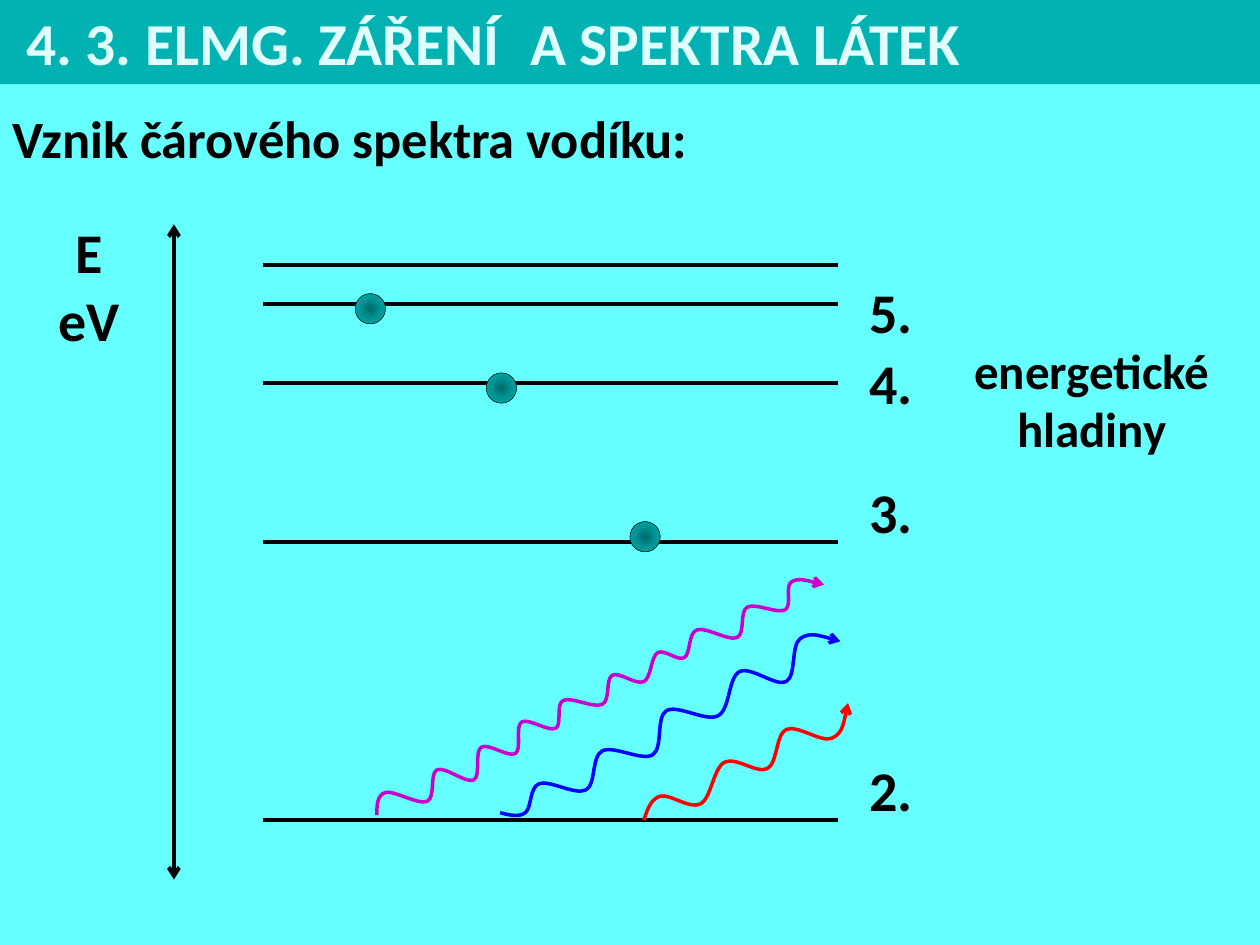
from lxml import etree
from pptx import Presentation
from pptx.dml.color import RGBColor
from pptx.enum.shapes import MSO_CONNECTOR, MSO_SHAPE
from pptx.enum.text import MSO_ANCHOR, PP_ALIGN
from pptx.oxml import parse_xml
from pptx.oxml.ns import nsdecls, qn
from pptx.util import Pt

STRAIGHT = MSO_CONNECTOR.STRAIGHT
RECTANGLE, OVAL = MSO_SHAPE.RECTANGLE, MSO_SHAPE.OVAL
LEFT, CENTER = PP_ALIGN.LEFT, PP_ALIGN.CENTER
MIDDLE = MSO_ANCHOR.MIDDLE

BLACK, TEAL = "000000", "00B2B2"
ELECTRON_STOPS = ((0, "006A6A"), (50, "009696"), (100, TEAL))

LEVEL_HEIGHTS = (151.2, 173.5, 218.9, 309.6, 468.7)
LEVEL_LABELS = (("5.", 154.8), ("4.", 195.8), ("3.", 269.3), ("2.", 428.4))
ELECTRONS = ((203, 167.8), (277.9, 213.1), (360, 298.1))
PHOTON_WAVES = {
    "FF0000": (
        (367.9, 468.7), (377.3, 455), (400.3, 459.4), (414, 435.6),
        (438.5, 439.2), (449.3, 416.9), (475.2, 421.9), (484.6, 401.8)),
    "0000FF": (
        (285.8, 464.4), (300.2, 464.4), (308.2, 447.8), (334.8, 451.4),
        (344.2, 429.1), (373, 431.3), (380.9, 406.1), (410.4, 409),
        (422.6, 383.8), (449.3, 389.5), (457.2, 365), (480.2, 366.5)),
    "CC00CC": (
        (215.3, 465.8), (220.3, 452.9), (244.1, 457.9), (249.8, 439.9),
        (270.7, 445.7), (275, 427), (294.5, 430.6), (298.1, 412.6),
        (317.5, 416.2), (321.8, 400.3), (344.2, 402.5), (349.9, 385.9),
        (367.9, 389.5), (375.8, 373), (391, 375.8), (398.2, 360),
        (421.2, 364.3), (427, 347), (448.6, 348.5), (452.2, 332.6),
        (470.9, 334.1)),
}


def color(value):
    """Turn a hex string into a colour."""
    return RGBColor.from_string(value)


def smooth_controls(knots):
    """Return the two control points of each segment of a smooth curve."""
    def shifted(index, sign):
        before, after = knots[index - 1], knots[index + 1]
        return tuple(k + sign * (b - a) / 6
                     for k, a, b in zip(knots[index], before, after))

    def halfway(first, second):
        return tuple((a + b) / 2 for a, b in zip(first, second))

    last = len(knots) - 1
    controls = []
    for end in range(1, last + 1):
        leaving = shifted(end - 1, 1) if end > 1 else None
        arriving = shifted(end, -1) if end < last else None
        controls.append((leaving or halfway(knots[0], arriving),
                         arriving or halfway(leaving, knots[last])))
    return controls


class SlideBuilder:
    """Holds the text style and the slide being drawn."""

    def __init__(self, page, font="Calibri"):
        """Remember the slide and its font."""
        self.page = page
        self.font = font

    def background(self, fill):
        """Fill the slide background."""
        self.page.background.fill.solid()
        self.page.background.fill.fore_color.rgb = color(fill)

    def add_lines(self, box, lines, size, ink=BLACK, align=LEFT):
        """Put bold lines of text into a box, one paragraph each."""
        frame = box.text_frame
        frame.word_wrap = True
        for index, line in enumerate(lines):
            para = frame.add_paragraph() if index else frame.paragraphs[0]
            para.alignment = align
            span = para.add_run()
            span.text = line
            span.font.name = self.font
            span.font.size = Pt(size)
            span.font.bold = True
            span.font.color.rgb = color(ink)

    def text(self, left, top, width, height, lines, size, align=CENTER):
        """Add a text box."""
        box = self.page.shapes.add_textbox(
            Pt(left), Pt(top), Pt(width), Pt(height))
        self.add_lines(box, lines, size, align=align)

    def shape(self, kind, left, top, width, height, fill):
        """Add a plain filled shape without outline."""
        shape = self.page.shapes.add_shape(
            kind, Pt(left), Pt(top), Pt(width), Pt(height))
        shape.shadow.inherit = False
        shape.fill.solid()
        shape.fill.fore_color.rgb = color(fill)
        shape.line.fill.background()
        return shape

    def title_bar(self, height, title):
        """Add the full-width title bar."""
        bar = self.shape(RECTANGLE, 0, 0, 720, height, TEAL)
        bar.text_frame.margin_left = Pt(15.1)
        bar.text_frame.vertical_anchor = MIDDLE
        self.add_lines(bar, [title], 34, "E0FFFF")

    def electron(self, left, top, size=17.3):
        """Add a ball shaded from its centre outwards."""
        ball = self.shape(OVAL, left, top, size, size, TEAL)
        self.stroke(ball, BLACK, 0.25)
        stops = "".join(
            f'<a:gs pos="{place * 1000}"><a:srgbClr val="{tone}"/></a:gs>'
            for place, tone in ELECTRON_STOPS)
        gradient = parse_xml(
            f'<a:gradFill {nsdecls("a")}><a:gsLst>{stops}</a:gsLst>'
            '<a:path path="circle"><a:fillToRect l="50000" t="50000" '
            'r="50000" b="50000"/></a:path></a:gradFill>')
        properties = ball.element.spPr
        properties.replace(properties.find(qn("a:solidFill")), gradient)

    def stroke(self, item, ink, width, arrows=()):
        """Style an outline and add arrowheads at the named ends."""
        item.line.color.rgb = color(ink)
        item.line.width = Pt(width)
        outline = item.element.spPr.find(qn("a:ln"))
        for end in arrows:
            etree.SubElement(outline, qn(f"a:{end}"), type="arrow")

    def line(self, left, top, right, bottom, arrows=()):
        """Add a straight line."""
        line = self.page.shapes.add_connector(
            STRAIGHT, Pt(left), Pt(top), Pt(right), Pt(bottom))
        self.stroke(line, BLACK, 2.25, arrows)
        etree.SubElement(line.element.spPr, qn("a:effectLst"))

    def wave(self, knots, ink):
        """Add a smooth curve through the knots, ending in an arrow."""
        corners = [(Pt(x), Pt(y)) for x, y in knots]
        builder = self.page.shapes.build_freeform(*corners[0])
        builder.add_line_segments(corners[1:], close=False)
        curve = builder.convert_to_shape()
        curve.shadow.inherit = False
        curve.fill.background()
        self.stroke(curve, ink, 2, ["tailEnd"])
        points = [(int(point.get("x")), int(point.get("y")))
                  for point in curve.element.iter(qn("a:pt"))]
        segments = list(curve.element.iter(qn("a:lnTo")))
        for segment, controls in zip(segments, smooth_controls(points)):
            bend = etree.Element(qn("a:cubicBezTo"))
            for x, y in controls:
                etree.SubElement(bend, qn("a:pt"),
                                 x=str(round(x)), y=str(round(y)))
            bend.append(segment[0])
            segment.getparent().replace(segment, bend)


def main():
    """Build the hydrogen spectrum slide."""
    deck = Presentation()
    deck.slide_width, deck.slide_height = Pt(720), Pt(540)
    slide = SlideBuilder(deck.slides.add_slide(deck.slide_layouts[6]))
    slide.background("66FFFF")
    slide.title_bar(48.2, "4. 3. ELMG. ZÁŘENÍ \tA SPEKTRA LÁTEK")
    slide.text(0, 56.9, 720, 43.9, ["Vznik čárového spektra vodíku:"], 30, LEFT)
    for height in LEVEL_HEIGHTS:
        slide.line(150.5, height, 478.8, height)
    slide.line(99.4, 128.2, 99.4, 502.6, ["headEnd", "tailEnd"])
    slide.text(25.2, 121, 51.1, 85, ["E", "eV"], 32)
    for label, top in LEVEL_LABELS:
        slide.text(483.8, top, 51.1, 46.1, [label], 32)
    slide.text(532.8, 190.8, 182.2, 74.9, ["energetické", "hladiny"], 28)
    for left, top in ELECTRONS:
        slide.electron(left, top)
    for ink, knots in PHOTON_WAVES.items():
        slide.wave(knots, ink)
    deck.save("out.pptx")


if __name__ == "__main__":
    main()
